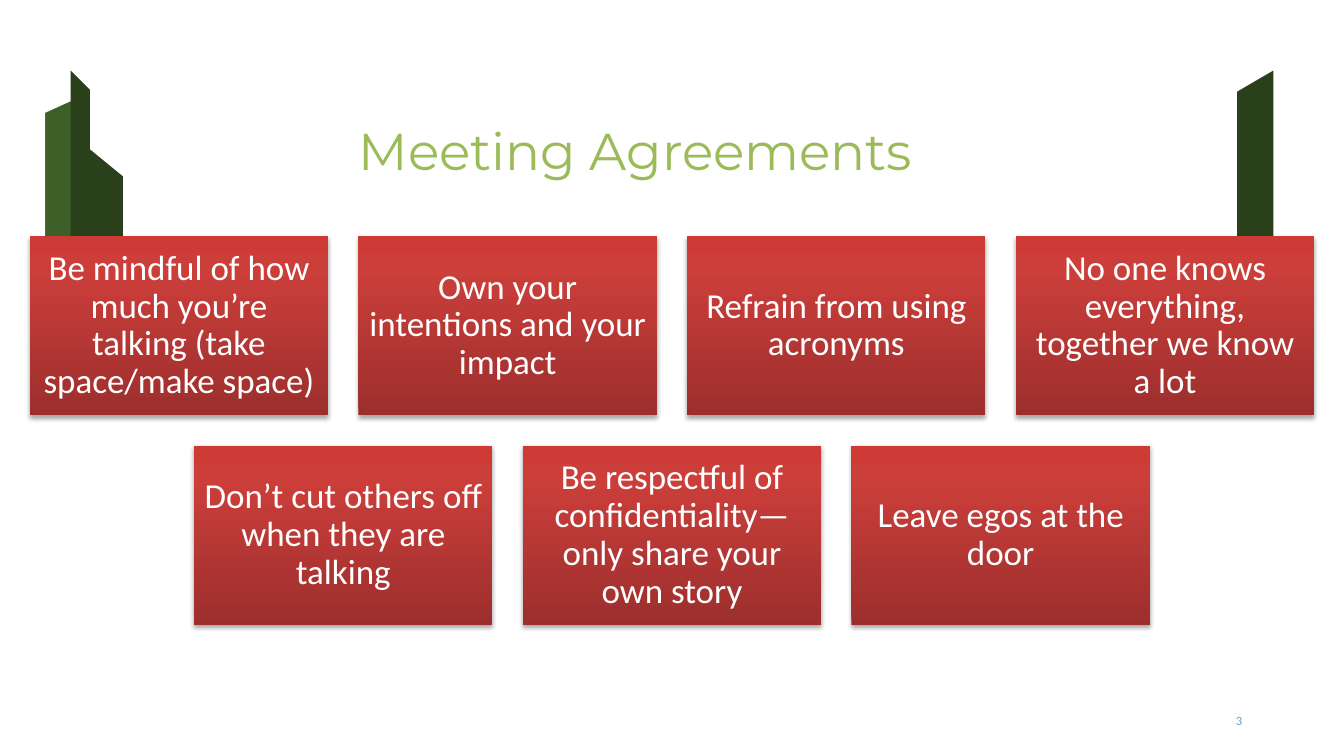
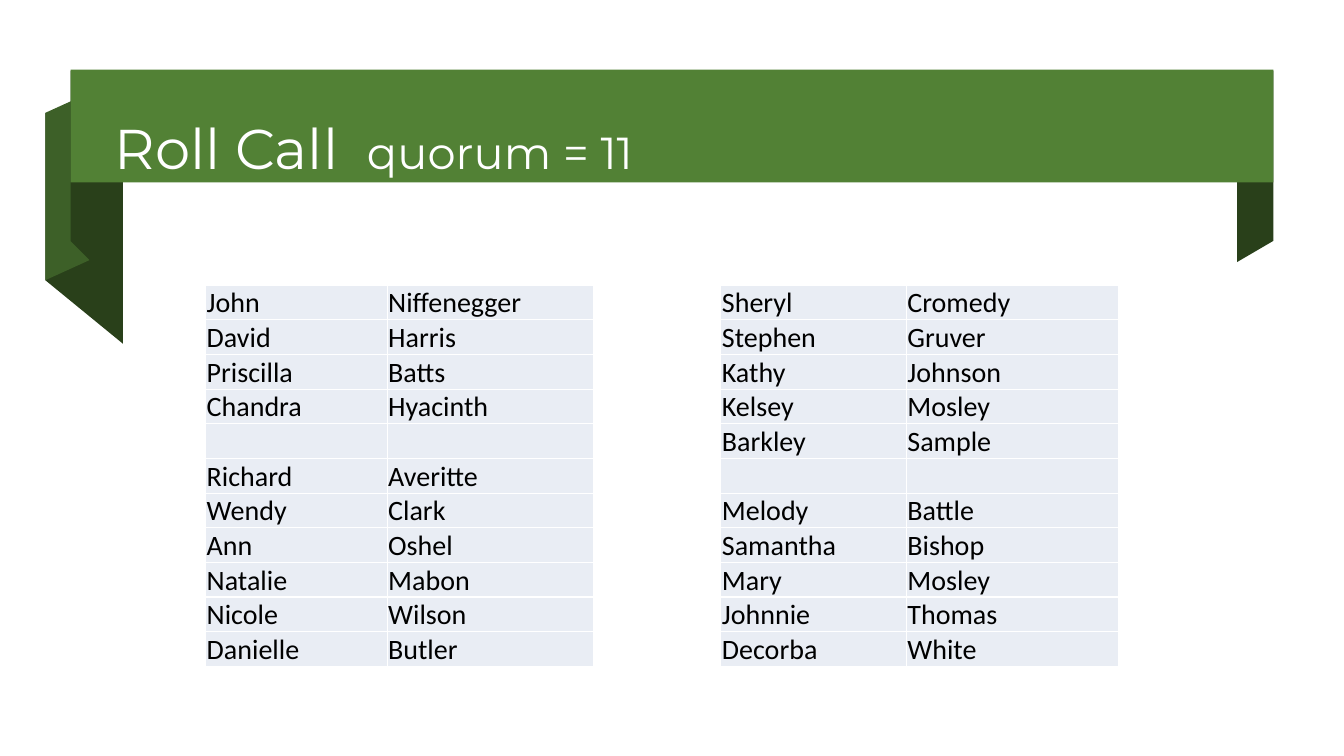
import pptx
import pptx.util
import pptx.dml.color
import pptx.enum.shapes
import pptx.enum.text
import pptx.oxml
import pptx.oxml.ns
from dataclasses import dataclass

Inches, Pt = pptx.util.Inches, pptx.util.Pt
ALIGN, ANCHOR = pptx.enum.text.PP_ALIGN, pptx.enum.text.MSO_ANCHOR
RECT = pptx.enum.shapes.MSO_SHAPE.RECTANGLE
NS = pptx.oxml.ns.nsdecls("a")


@dataclass(frozen=True)
class Theme:
    head: str = "Montserrat"
    body: str = "Calibri"
    white: str = "FFFFFF"
    black: str = "000000"
    band: str = "528135"
    fold: str = "3D6028"
    shade: str = "29401A"
    lime: str = "9BBB59"
    aqua: str = "4BACC6"
    cell: str = "E9EDF4"
    card: tuple = ((0, "9C2F2D"), (80, "CB3E3A"), (100, "CE3B37"))
    title: int = 37
    band_title: int = 40
    band_note: int = 32
    card_text: int = 25
    table_text: int = 20
    number: int = 9


T = Theme()
WIDTH, HEIGHT = 13.33, 7.5

# Content
AGREEMENTS = [
    ["Be mindful of how much you’re talking (take space/make space)",
     "Own your intentions and your impact",
     "Refrain from using acronyms",
     "No one knows everything, together we know a lot"],
    ["Don’t cut others off when they are talking",
     "Be respectful of confidentiality—only share your own story",
     "Leave egos at the door"],
]
BLANK = ("", "")
ROLL_LEFT = [
    ("John", "Niffenegger"), ("David", "Harris"), ("Priscilla", "Batts"),
    ("Chandra", "Hyacinth"), BLANK, ("Richard", "Averitte"),
    ("Wendy", "Clark"), ("Ann", "Oshel"), ("Natalie", "Mabon"),
    ("Nicole", "Wilson"), ("Danielle", "Butler"),
]
ROLL_RIGHT = [
    ("Sheryl", "Cromedy"), ("Stephen", "Gruver"), ("Kathy", "Johnson"),
    ("Kelsey", "Mosley"), ("Barkley", "Sample"), BLANK,
    ("Melody", "Battle"), ("Samantha", "Bishop"), ("Mary", "Mosley"),
    ("Johnnie", "Thomas"), ("Decorba", "White"),
]
# Ribbon folds: left x, left y, right x, right y, height, colour
FOLDS = [
    (0.45, 1.12, 1.22, 1.75, 1.66, T.shade),
    (0.45, 1.12, 0.89, 0.92, 1.66, T.fold),
    (0.70, 0.70, 0.89, 0.89, 1.69, T.shade),
    (12.27, 0.91, 12.63, 0.70, 1.69, T.shade),
]
# Grids
CARD_W, CARD_H, GAP, CARDS_TOP = 2.96, 1.78, 0.3, 2.34
TABLE_TOP, ROW_H = 2.83, 0.34
TABLES = [(2.04, (1.8, 2.05), ROLL_LEFT), (7.15, (1.84, 2.1), ROLL_RIGHT)]


def rgb(value):
    return pptx.dml.color.RGBColor.from_string(value)


def box(*lengths):
    return [Inches(n) for n in lengths]


def plain(sp, color):
    sp.shadow.inherit = False
    sp.fill.solid()
    sp.fill.fore_color.rgb = rgb(color)
    sp.line.fill.background()


def style(p, font, size, color, align=ALIGN.LEFT):
    p.alignment = align
    p.font.name, p.font.size = font, Pt(size)
    p.font.color.rgb = rgb(color)


def frame(sp, anchor=ANCHOR.TOP, insets=(0, 0, 0, 0)):
    tf = sp.text_frame
    tf.word_wrap = True
    tf.vertical_anchor = anchor
    tf.margin_left, tf.margin_top, tf.margin_right, tf.margin_bottom = box(*insets)
    return tf


def new_slide(prs):
    """Blank slide carrying the folds of the ribbon."""
    s = prs.slides.add_slide(prs.slide_layouts[6])
    for x0, y0, x1, y1, h, color in FOLDS:
        fb = s.shapes.build_freeform(Inches(x0), Inches(y0))
        fb.add_line_segments([box(x0, y0 + h), box(x1, y1 + h), box(x1, y1)])
        plain(fb.convert_to_shape(), color)
    return s


def add_label(s, text, at, anchor, inset, *look):
    tf = frame(s.shapes.add_textbox(*box(*at)), anchor, (inset,) * 4)
    tf.text = text
    style(tf.paragraphs[0], *look)


def add_card(s, text, left, top):
    sp = s.shapes.add_shape(RECT, *box(left, top, CARD_W, CARD_H))
    sp.line.fill.background()
    # Three-stop gradient and soft shadow
    stops = "".join(f'<a:gs pos="{pos * 1000}"><a:srgbClr val="{c}"/></a:gs>'
                    for pos, c in T.card)
    pr = sp._element.spPr
    pr.insert(2, pptx.oxml.parse_xml(
        f'<a:gradFill {NS} rotWithShape="1"><a:gsLst>{stops}</a:gsLst>'
        '<a:lin ang="16200000" scaled="0"/></a:gradFill>'))
    pr.append(pptx.oxml.parse_xml(
        f'<a:effectLst {NS}><a:outerShdw blurRad="{Pt(3.1)}" dist="{Pt(1.8)}" '
        f'dir="5400000" rotWithShape="0"><a:srgbClr val="{T.black}">'
        '<a:alpha val="35000"/></a:srgbClr></a:outerShdw></a:effectLst>'))
    tf = frame(sp, ANCHOR.MIDDLE, (0.1,) * 4)
    tf.text = text
    p = tf.paragraphs[0]
    p.line_spacing = 0.9
    style(p, T.body, T.card_text, T.white, ALIGN.CENTER)


def add_band(s, title, note):
    sp = s.shapes.add_shape(RECT, *box(0.7, 0.69, 11.93, 1.12))
    plain(sp, T.band)
    p = frame(sp, insets=(0, 0.44, 0, 0)).paragraphs[0]
    style(p, T.head, T.band_title, T.white)
    for text, size in ((title + "\t", T.band_title), (note, T.band_note)):
        r = p.add_run()
        r.text, r.font.size = text, Pt(size)
    # Indent and tab stop for the note
    pr = p._p.get_or_add_pPr()
    pr.set("marL", str(Inches(0.44)))
    pr.set("indent", "0")
    pr.insert(0, pptx.oxml.parse_xml(
        f'<a:tabLst {NS}><a:tab pos="{Inches(8.19)}" algn="l"/></a:tabLst>'))


def add_roll(s, left, widths, names):
    table = s.shapes.add_table(len(names), len(widths), *box(
        left, TABLE_TOP, sum(widths), ROW_H * len(names))).table
    table.first_row = table.horz_banding = False
    for col, w in zip(table.columns, widths):
        col.width = Inches(w)
    for row, person in zip(table.rows, names):
        row.height = Inches(ROW_H)
        for cell, text in zip(row.cells, person):
            cell.text = text
            cell.vertical_anchor = ANCHOR.MIDDLE
            cell.margin_left = cell.margin_top = cell.margin_right = Inches(0.01)
            cell.margin_bottom = 0
            style(cell.text_frame.paragraphs[0], T.body, T.table_text, T.black)
            cell.fill.solid()
            cell.fill.fore_color.rgb = rgb(T.cell)
            for i, side in enumerate("LRTB"):
                cell._tc.get_or_add_tcPr().insert(i, pptx.oxml.parse_xml(
                    f'<a:ln{side} {NS} w="{Pt(1)}"><a:solidFill>'
                    f'<a:srgbClr val="{T.white}"/></a:solidFill></a:ln{side}>'))


def main():
    prs = pptx.Presentation()
    prs.slide_width, prs.slide_height = box(WIDTH, HEIGHT)

    # Meeting agreements: centred rows of cards
    s = new_slide(prs)
    add_label(s, "Meeting Agreements", (3.56, 1.18, 6.22, 0.62), ANCHOR.TOP, 0,
              T.head, T.title, T.lime)
    add_label(s, "3", (9.42, 6.95, 3, 0.4), ANCHOR.MIDDLE, 0.1,
              T.body, T.number, T.aqua, ALIGN.RIGHT)
    for i, texts in enumerate(AGREEMENTS):
        left = (WIDTH - len(texts) * (CARD_W + GAP) + GAP) / 2
        for j, text in enumerate(texts):
            add_card(s, text, left + j * (CARD_W + GAP),
                     CARDS_TOP + i * (CARD_H + GAP))

    # Roll call: ribbon band and two lists of names
    s = new_slide(prs)
    add_band(s, "Roll Call", "quorum = 11")
    for left, widths, names in TABLES:
        add_roll(s, left, widths, names)

    prs.save("out.pptx")


if __name__ == "__main__":
    main()
